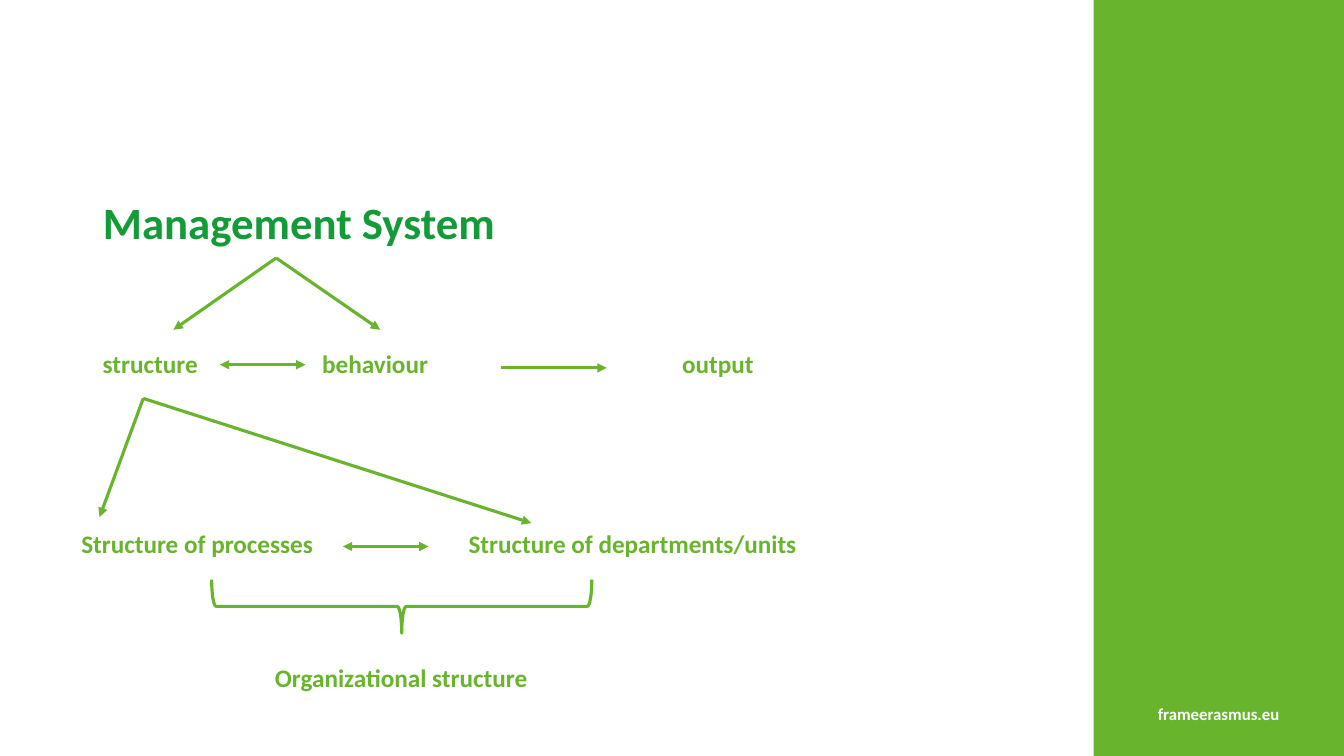
from dataclasses import dataclass

import pptx
import pptx.dml.color
import pptx.enum.shapes
import pptx.enum.text
import pptx.oxml.ns
import pptx.presentation
import pptx.shapes.base
import pptx.slide
import pptx.text.text
import pptx.util
from lxml import etree

Cm = pptx.util.Cm
COLORS = {"leaf": "69B42D", "title": "139B38", "white": "FFFFFF"}
FONT = "Calibri"
WEIGHT = 2.25
HIGH = 19.05
SIDE = 27.56
SPAN = 6.31


@dataclass
class Label:
    text: str
    left: float
    top: float
    width: float
    high: float = 1.02
    size: int = 18
    color: str = "leaf"
    center: bool = False


@dataclass
class Arrow:
    start: tuple[float, float]
    end: tuple[float, float]
    double: bool = False


LABELS = [
    Label("structure", 2.34, 8.66, 3.4),
    Label("behaviour", 7.87, 8.66, 3.4),
    Label("output", 16.94, 8.66, 3.4),
    Label("Structure of processes", 1.8, 13.18, 6.71),
    Label("Structure of departments/units", 11.56, 13.18, 9.8),
    Label("Organizational structure", 6.68, 16.56, 6.91),
    Label("frameerasmus.eu", SIDE, 17.6, SPAN, 0.77, 12, "white", True),
]

SYSTEM = (6.96, 6.5)
STRUCTURE = (3.61, 10.04)
ARROWS = [
    Arrow(SYSTEM, (4.37, 8.31)),
    Arrow(SYSTEM, (9.58, 8.31)),
    Arrow((12.62, 9.27), (15.29, 9.27)),
    Arrow((5.54, 9.19), (7.7, 9.19), True),
    Arrow(STRUCTURE, (2.51, 13.03)),
    Arrow(STRUCTURE, (13.39, 13.18)),
    Arrow((8.64, 13.77), (10.8, 13.77), True),
]


def tint(name: str) -> pptx.dml.color.RGBColor:
    return pptx.dml.color.RGBColor.from_string(COLORS[name])


def style(para: pptx.text.text._Paragraph, size: int, color: str) -> None:
    para.font.name = FONT
    para.font.size = pptx.util.Pt(size)
    para.font.bold = True
    para.font.color.rgb = tint(color)


def stroke(shape: pptx.shapes.base.BaseShape) -> None:
    shape.line.color.rgb = tint("leaf")
    shape.line.width = pptx.util.Pt(WEIGHT)


def add_title(slide: pptx.slide.Slide) -> None:
    title = slide.shapes.title
    title.left, title.top = Cm(2.34), Cm(4.45)
    title.width, title.height = Cm(24.28), Cm(2.46)
    frame = title.text_frame
    frame.text = "Management System"
    frame.auto_size = pptx.enum.text.MSO_AUTO_SIZE.NONE
    frame.vertical_anchor = pptx.enum.text.MSO_ANCHOR.MIDDLE
    para = frame.paragraphs[0]
    para.alignment = pptx.enum.text.PP_ALIGN.LEFT
    para.line_spacing = 0.9
    style(para, 32, "title")


def add_panel(slide: pptx.slide.Slide) -> None:
    panel = slide.shapes.add_shape(
        pptx.enum.shapes.MSO_SHAPE.RECTANGLE, Cm(SIDE), 0, Cm(SPAN), Cm(HIGH)
    )
    panel.shadow.inherit = False
    panel.fill.solid()
    panel.fill.fore_color.rgb = tint("leaf")
    panel.line.fill.background()


def add_label(slide: pptx.slide.Slide, label: Label) -> None:
    box = slide.shapes.add_textbox(
        Cm(label.left), Cm(label.top), Cm(label.width), Cm(label.high)
    )
    frame = box.text_frame
    frame.word_wrap = True
    frame.auto_size = pptx.enum.text.MSO_AUTO_SIZE.SHAPE_TO_FIT_TEXT
    frame.text = label.text
    para = frame.paragraphs[0]
    if label.center:
        para.alignment = pptx.enum.text.PP_ALIGN.CENTER
    style(para, label.size, label.color)


def add_arrow(slide: pptx.slide.Slide, arrow: Arrow) -> None:
    line = slide.shapes.add_connector(
        pptx.enum.shapes.MSO_CONNECTOR.STRAIGHT,
        *(Cm(value) for value in arrow.start + arrow.end),
    )
    stroke(line)
    qn = pptx.oxml.ns.qn
    ends = ["a:headEnd", "a:tailEnd"] if arrow.double else ["a:tailEnd"]
    for end in ends:
        etree.SubElement(line.line._get_or_add_ln(), qn(end), type="triangle")
    etree.SubElement(line._element.spPr, qn("a:effectLst"))


def add_brace(slide: pptx.slide.Slide) -> None:
    brace = slide.shapes.add_shape(
        pptx.enum.shapes.MSO_SHAPE.LEFT_BRACE,
        Cm(9.45), Cm(10.49), Cm(1.35), Cm(9.58),
    )
    brace.rotation = 270
    brace.shadow.inherit = False
    brace.fill.background()
    stroke(brace)


def main() -> None:
    deck = pptx.Presentation()
    deck.slide_width, deck.slide_height = Cm(SIDE + SPAN), Cm(HIGH)
    slide = deck.slides.add_slide(deck.slide_layouts.get_by_name("Title Only"))
    add_panel(slide)
    add_title(slide)
    for label in LABELS:
        add_label(slide, label)
    for arrow in ARROWS:
        add_arrow(slide, arrow)
    add_brace(slide)
    deck.save("out.pptx")


if __name__ == "__main__":
    main()
